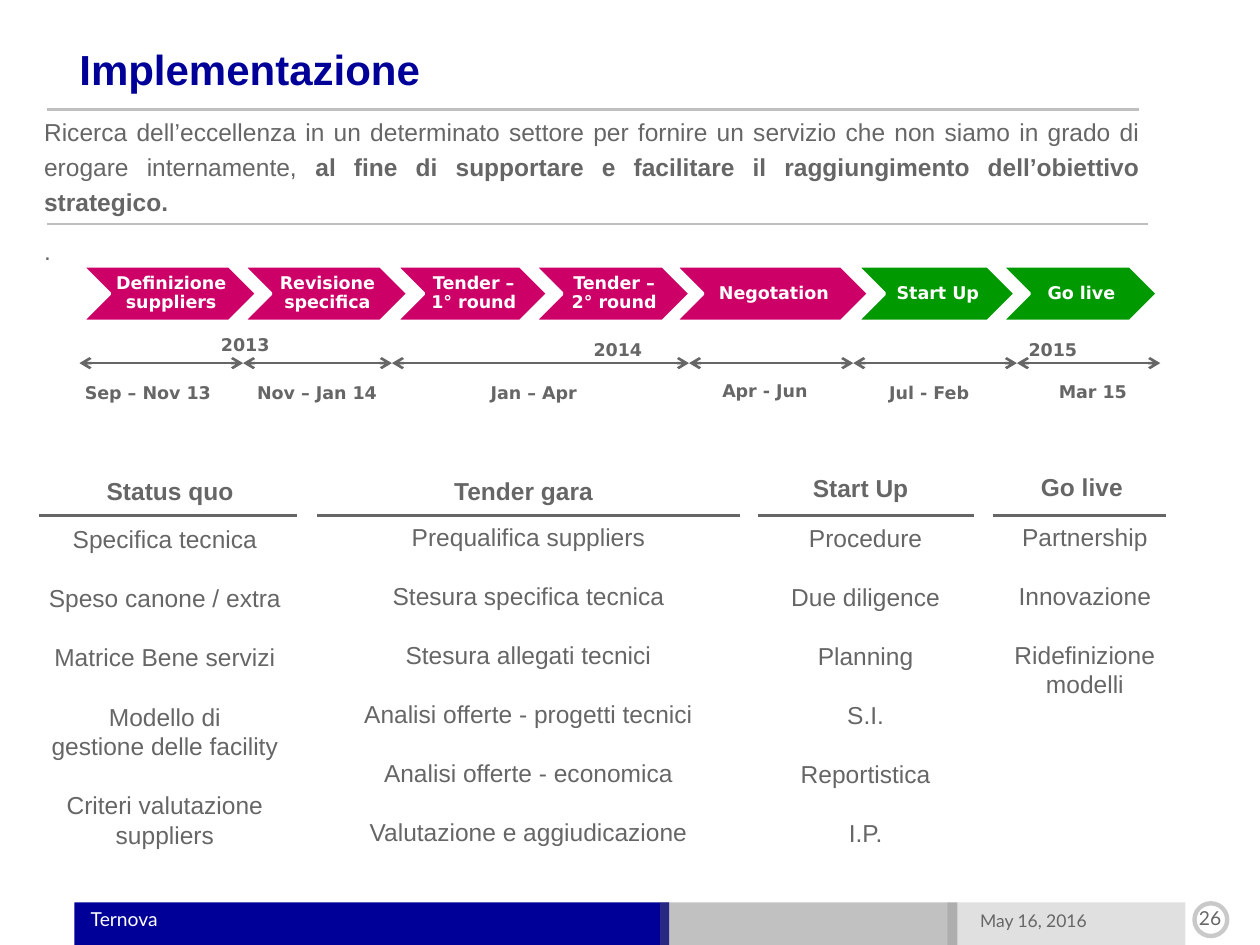
from itertools import pairwise
from lxml import etree
from pptx import Presentation
from pptx import util as u
from pptx.dml.color import RGBColor
from pptx.enum import shapes, text
from pptx.oxml.ns import qn

NAVY = RGBColor(0x00, 0x00, 0x99)
GRAY = RGBColor(0x66, 0x66, 0x66)
SILVER = RGBColor(0xBF, 0xBF, 0xBF)
PINK = RGBColor(0xCC, 0x00, 0x66)
GREEN = RGBColor(0x00, 0x99, 0x00)
WHITE = RGBColor(0xFF, 0xFF, 0xFF)

LEFT, MID, JUST = (text.PP_ALIGN.LEFT, text.PP_ALIGN.CENTER,
                   text.PP_ALIGN.JUSTIFY)
KIND = shapes.MSO_SHAPE

BODY = dict(name="Arial", size=u.Pt(14), bold=False)
HEAD = dict(BODY, bold=True)
TITLE = dict(HEAD, size=u.Pt(24))
LABEL = dict(name="DejaVu Sans", size=u.Pt(10), bold=True)
FOOT = dict(name="Lato", size=u.Pt(11), bold=False)
DATE = dict(FOOT, size=u.Pt(10))

STEPS = [
    ("Definizione suppliers", 1.65, 3.53, PINK),
    ("Revisione specifica", 4.9, 3.33, PINK),
    ("Tender – 1° round", 7.98, 3.07, PINK),
    ("Tender – 2° round", 10.77, 3.15, PINK),
    ("Negotation", 13.61, 3.91, PINK),
    ("Start Up", 17.27, 3.2, GREEN),
    ("Go live", 20.19, 3.15, GREEN),
]
STOPS = [1.6, 4.9, 7.9, 13.89, 17.2, 20.5, 23.39]
DATES = [
    ("2013", 3.89, 6.4, 2.11),
    ("2014", 11.4, 6.5, 2.11),
    ("2015", 20.17, 6.5, 2.11),
    ("Sep – Nov 13", 1.09, 7.37, 3.78),
    ("Nov – Jan 14", 4.5, 7.37, 3.78),
    ("Jan – Apr", 7.75, 7.37, 6.02),
    ("Apr - Jun", 13.77, 7.33, 3.3),
    ("Jul - Feb", 17.08, 7.37, 3.3),
    ("Mar 15", 20.38, 7.35, 3.3),
]
LISTS = [
    ("Status quo", (0.66, 9.47, 5.54), (0.66, 10.44, 5.33), (0.79, 5.99),
     ["Specifica tecnica", "Speso canone / extra", "Matrice Bene servizi",
      "Modello di\vgestione delle facility",
      "Criteri valutazione\vsuppliers"]),
    ("Tender gara", (6.2, 9.47, 8.71), (6.4, 10.39, 8.51), (6.4, 14.91),
     ["Prequalifica suppliers", "Stesura specifica tecnica",
      "Stesura allegati tecnici", "Analisi offerte - progetti tecnici",
      "Analisi offerte - economica", "Valutazione e aggiudicazione"]),
    ("Start Up", (15.09, 9.42, 4.52), (15.29, 10.41, 4.32), (15.29, 19.63),
     ["Procedure", "Due diligence", "Planning", "S.I.", "Reportistica",
      "I.P."]),
    ("Go live", (20.17, 9.4, 3.28), (20.17, 10.39, 3.4), (20.02, 23.5),
     ["Partnership", "Innovazione", "Ridefinizione\vmodelli"]),
]


def style(font, look, ink):
    for key, val in look.items():
        setattr(font, key, val)
    font.color.rgb = ink


def pad(frame, *gaps):
    for side, gap in zip(("left", "top", "right", "bottom"), gaps):
        setattr(frame, "margin_" + side, u.Cm(gap))


def fade(color, share):
    clr = color.find(".//" + qn("a:srgbClr"))
    etree.SubElement(clr, qn("a:alpha"), val=str(share * 1000))


def write(frame, lines, look, ink=GRAY, align=MID, space=1, gap=0):
    frame.word_wrap = True
    for i, line in enumerate(lines):
        para = frame.add_paragraph() if i else frame.paragraphs[0]
        para.text = line
        para.alignment = align
        para.line_spacing = space
        if i:
            para.space_before = u.Pt(gap)
        for run in para.runs:
            style(run.font, look, ink)


def label(slide, lines, box, look, tight=False, **opts):
    frame = slide.shapes.add_textbox(*map(u.Cm, box)).text_frame
    if tight:
        pad(frame, 0, 0, 0, 0)
    write(frame, lines, look, **opts)
    return frame


def block(slide, kind, box, ink=None):
    shape = slide.shapes.add_shape(kind, *map(u.Cm, box))
    shape.shadow.inherit = False
    if ink is None:
        shape.fill.background()
    else:
        shape.fill.solid()
        shape.fill.fore_color.rgb = ink
        shape.line.fill.background()
    return shape


def rule(slide, start, end, top, ink=GRAY, arrows=False):
    line = slide.shapes.add_connector(
        shapes.MSO_CONNECTOR.STRAIGHT,
        u.Cm(start), u.Cm(top), u.Cm(end), u.Cm(top))
    line.line.color.rgb = ink
    line.line.width = u.Pt(1.5)
    if arrows:
        for tip in ("a:headEnd", "a:tailEnd"):
            etree.SubElement(line.line._get_or_add_ln(), qn(tip), type="arrow")
    etree.SubElement(line._element.spPr, qn("a:effectLst"))


def footer(slide):
    for left, wide, ink, share in [(1.5, 11.99, NAVY, 100),
                                   (13.31, 5.99, GRAY, 40),
                                   (19.1, 4.8, GRAY, 20)]:
        bar = block(slide, KIND.RECTANGLE, (left, 18.19, wide, 0.86), ink)
        if share < 100:
            fade(bar._element.spPr, share)
    label(slide, ["Ternova"], (1.83, 18.34, 11.28, 0.43), FOOT, True,
          ink=WHITE, align=LEFT, space=0.9)
    label(slide, ["26"], (23.85, 18.26, 1.09, 0.48), FOOT, True)
    label(slide, ["May 16, 2016"], (19.76, 18.39, 3.94, 0.48), DATE, True,
          align=LEFT, space=0.9)
    ring = block(slide, KIND.OVAL, (24.08, 18.21, 0.66, 0.66))
    ring.line.color.rgb = GRAY
    ring.line.width = u.Pt(2.5)
    fade(ring.line._get_or_add_ln(), 35)


def intro(slide):
    title = slide.shapes.title
    for key, val in zip(("left", "top", "width", "height"),
                        (1.6, 0.99, 21.13, 0.94)):
        setattr(title, key, u.Cm(val))
    frame = title.text_frame
    pad(frame, 0, 0, 0, 0)
    frame.auto_size = text.MSO_AUTO_SIZE.NONE
    frame.vertical_anchor = text.MSO_ANCHOR.TOP
    write(frame, ["Implementazione"], TITLE, NAVY, LEFT, 0.9)
    lines = ["Ricerca dell’eccellenza in un determinato settore per fornire "
             "un servizio che non siamo in grado di erogare internamente, ",
             "."]
    frame = label(slide, lines, (0.89, 2.24, 22.1, 15.39), BODY, True,
                  align=JUST, space=1.2, gap=6)
    first, last = frame.paragraphs
    last.alignment = LEFT
    last.line_spacing = u.Pt(22)
    run = first.add_run()
    run.text = ("al fine di supportare e facilitare il raggiungimento "
                "dell’obiettivo strategico.")
    style(run.font, HEAD, GRAY)
    rule(slide, 0.94, 22.96, 2.21, SILVER)
    rule(slide, 0.94, 23.14, 4.52, SILVER)


def steps(slide):
    for name, left, wide, ink in STEPS:
        step = block(slide, KIND.CHEVRON, (left, 5.36, wide, 1.12), ink)
        step.line.color.rgb = WHITE
        step.line.width = u.Pt(2)
        frame = step.text_frame
        pad(frame, 0.1, 0.03, 0.03, 0.03)
        frame.vertical_anchor = text.MSO_ANCHOR.MIDDLE
        write(frame, [name], LABEL, WHITE, space=0.9)
    for start, end in pairwise(STOPS):
        rule(slide, start, end, 7.32, arrows=True)
    for name, left, top, wide in DATES:
        label(slide, [name], (left, top, wide, 0.85), LABEL, space=1.5)


def lists(slide):
    for name, head, body, ends, items in LISTS:
        label(slide, [name], (*head, 0.86), HEAD)
        label(slide, items, (*body, 6.9), BODY, gap=17)
        rule(slide, *ends, 10.39)


def main():
    deck = Presentation()
    deck.slide_width, deck.slide_height = u.Cm(25.4), u.Cm(19.05)
    slide = deck.slides.add_slide(deck.slide_layouts[5])
    footer(slide)
    intro(slide)
    steps(slide)
    lists(slide)
    deck.save("out.pptx")


if __name__ == "__main__":
    main()
